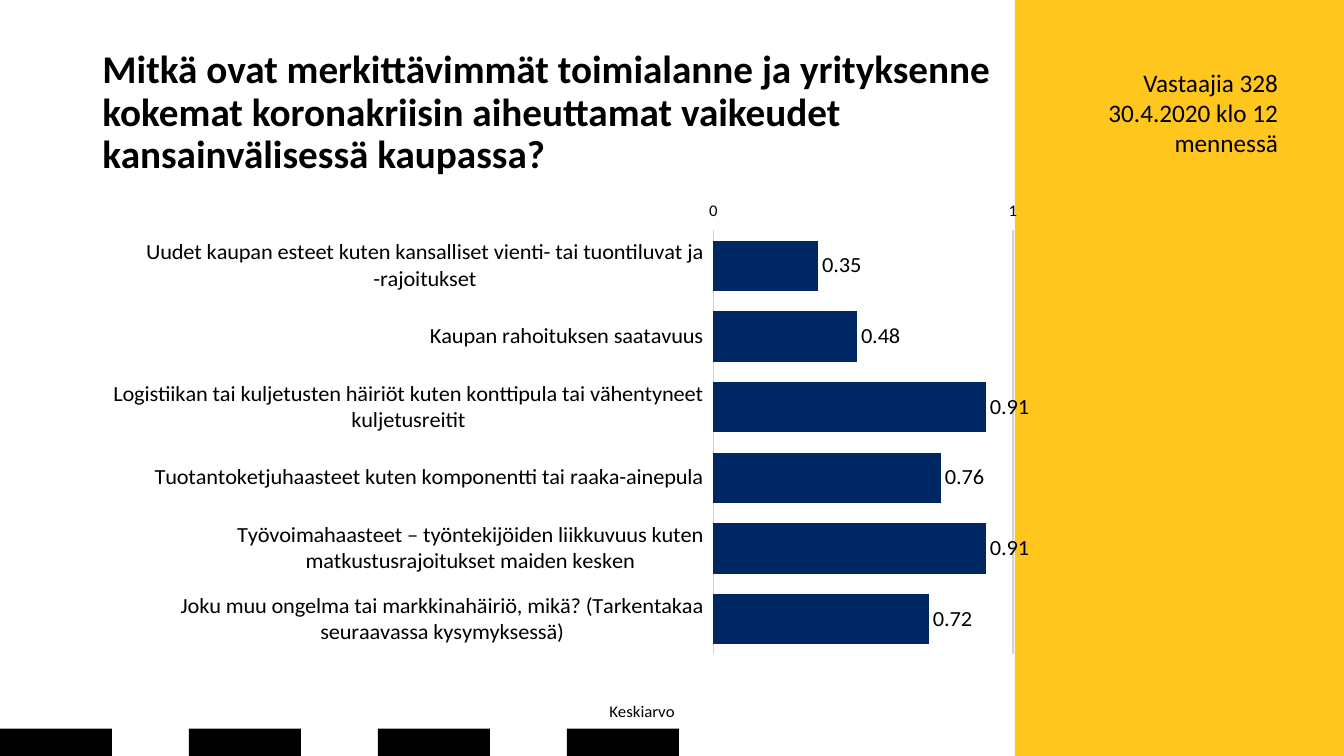
from lxml import etree
from pptx import Presentation
from pptx.chart.data import CategoryChartData
from pptx.dml.color import RGBColor
from pptx.enum import chart as ch, shapes, text
from pptx.oxml import ns
from pptx.util import Pt

YELLOW = RGBColor(0xFF, 0xC6, 0x1E)
NAVY = RGBColor(0x00, 0x26, 0x63)
BLACK = RGBColor(0x00, 0x00, 0x00)
GRID = RGBColor(0xD3, 0xD3, 0xD3)
FONT = "Calibri"

QUESTION = ("Mitkä ovat merkittävimmät toimialanne ja yrityksenne kokemat "
            "koronakriisin aiheuttamat vaikeudet kansainvälisessä kaupassa?")
RESPONDENTS = "Vastaajia 328\n30.4.2020 klo 12 mennessä"
DIFFICULTIES = {
    "Uudet kaupan esteet kuten kansalliset vienti- tai tuontiluvat ja -rajoitukset": 0.35,
    "Kaupan rahoituksen saatavuus": 0.48,
    "Logistiikan tai kuljetusten häiriöt kuten konttipula tai vähentyneet kuljetusreitit": 0.91,
    "Tuotantoketjuhaasteet kuten komponentti tai raaka-ainepula": 0.76,
    "Työvoimahaasteet – työntekijöiden liikkuvuus kuten matkustusrajoitukset maiden kesken": 0.91,
    "Joku muu ongelma tai markkinahäiriö, mikä? (Tarkentakaa seuraavassa kysymyksessä)": 0.72,
}


def style(font, size, bold=False):
    font.name = FONT
    font.size = Pt(size)
    font.bold = bold
    font.color.rgb = BLACK


def add_block(slide, left, top, width, height, color):
    block = slide.shapes.add_shape(
        shapes.MSO_SHAPE.RECTANGLE, Pt(left), Pt(top), Pt(width), Pt(height))
    block.shadow.inherit = False
    block.fill.solid()
    block.fill.fore_color.rgb = color
    block.line.fill.background()


def add_stripe(slide, left, top, width, height, count, pitch):
    for i in range(count):
        add_block(slide, left + i * pitch, top, width, height, BLACK)


def set_question(slide, left, top, width, height):
    question = slide.shapes.title
    question.left, question.top = Pt(left), Pt(top)
    question.width, question.height = Pt(width), Pt(height)
    frame = question.text_frame
    frame.text = QUESTION
    frame.word_wrap = True
    frame.auto_size = text.MSO_AUTO_SIZE.NONE
    frame.vertical_anchor = text.MSO_ANCHOR.MIDDLE
    paragraph = frame.paragraphs[0]
    paragraph.alignment = text.PP_ALIGN.LEFT
    paragraph.line_spacing = 0.9
    style(paragraph.runs[0].font, 28, True)


def add_respondents(slide, left, top, width, height):
    respondents = slide.shapes.add_textbox(Pt(left), Pt(top), Pt(width), Pt(height))
    frame = respondents.text_frame
    frame.word_wrap = True
    frame.text = RESPONDENTS
    for paragraph in frame.paragraphs:
        paragraph.alignment = text.PP_ALIGN.RIGHT
        style(paragraph.runs[0].font, 18)


def place(parent, index, **settings):
    for old in parent.findall(ns.qn("c:layout")):
        parent.remove(old)
    layout = etree.Element(ns.qn("c:layout"))
    manual = etree.SubElement(layout, ns.qn("c:manualLayout"))
    for tag, value in settings.items():
        etree.SubElement(manual, ns.qn("c:" + tag)).set("val", str(value))
    parent.insert(index, layout)


def add_difficulties(slide, left, top, width, height):
    data = CategoryChartData()
    data.categories = list(DIFFICULTIES)
    data.add_series("Series 1", list(DIFFICULTIES.values()))
    chart = slide.shapes.add_chart(
        ch.XL_CHART_TYPE.BAR_CLUSTERED, Pt(left), Pt(top), Pt(width), Pt(height), data).chart
    chart.has_title = False
    chart.has_legend = False
    style(chart.font, 18)

    bars = chart.plots[0]
    bars.gap_width = 40
    bars.vary_by_categories = False
    fill = bars.series[0].format.fill
    fill.solid()
    fill.fore_color.rgb = NAVY
    bars.has_data_labels = True
    labels = bars.data_labels
    labels.show_value = True
    labels.number_format = "0.00"
    labels.number_format_is_linked = False
    labels.position = ch.XL_LABEL_POSITION.OUTSIDE_END
    style(labels.font, 16)

    causes, mean = chart.category_axis, chart.value_axis
    for axis, size in ((causes, 16), (mean, 12)):
        axis.format.line.fill.background()
        axis.major_tick_mark = ch.XL_TICK_MARK.CROSS
        style(axis.tick_labels.font, size)
    causes.reverse_order = True
    causes.crosses = ch.XL_AXIS_CROSSES.MAXIMUM

    mean.minimum_scale, mean.maximum_scale, mean.major_unit = 0, 1.5, 1
    mean.tick_labels.number_format = "General"
    mean.tick_labels.number_format_is_linked = False
    mean.major_gridlines.format.line.color.rgb = GRID
    mean.major_gridlines.format.line.width = Pt(1)
    caption = mean.axis_title
    caption.text_frame.text = "Keskiarvo"
    style(caption.text_frame.paragraphs[0].runs[0].font, 12)

    place(caption._element, 1, xMode="edge", yMode="edge", x=0.47, y=0.92)
    plot_area = chart._chartSpace.find(".//" + ns.qn("c:plotArea"))
    place(plot_area, 0, layoutTarget="inner", xMode="edge", yMode="edge",
          x=0.568, y=0.02, w=0.411, h=0.817)


def build_slide(deck):
    slide = deck.slides.add_slide(deck.slide_layouts[5])
    add_block(slide, 725, 0, 235, 540, YELLOW)
    add_stripe(slide, 0, 520.5, 80, 19.5, count=4, pitch=135)
    set_question(slide, 66, 29, 710, 104)
    add_respondents(slide, 771, 44.5, 149, 73)
    add_difficulties(slide, 66, 144, 781, 384)


def main():
    deck = Presentation()
    deck.slide_width, deck.slide_height = Pt(960), Pt(540)
    build_slide(deck)
    deck.save("out.pptx")


if __name__ == "__main__":
    main()
